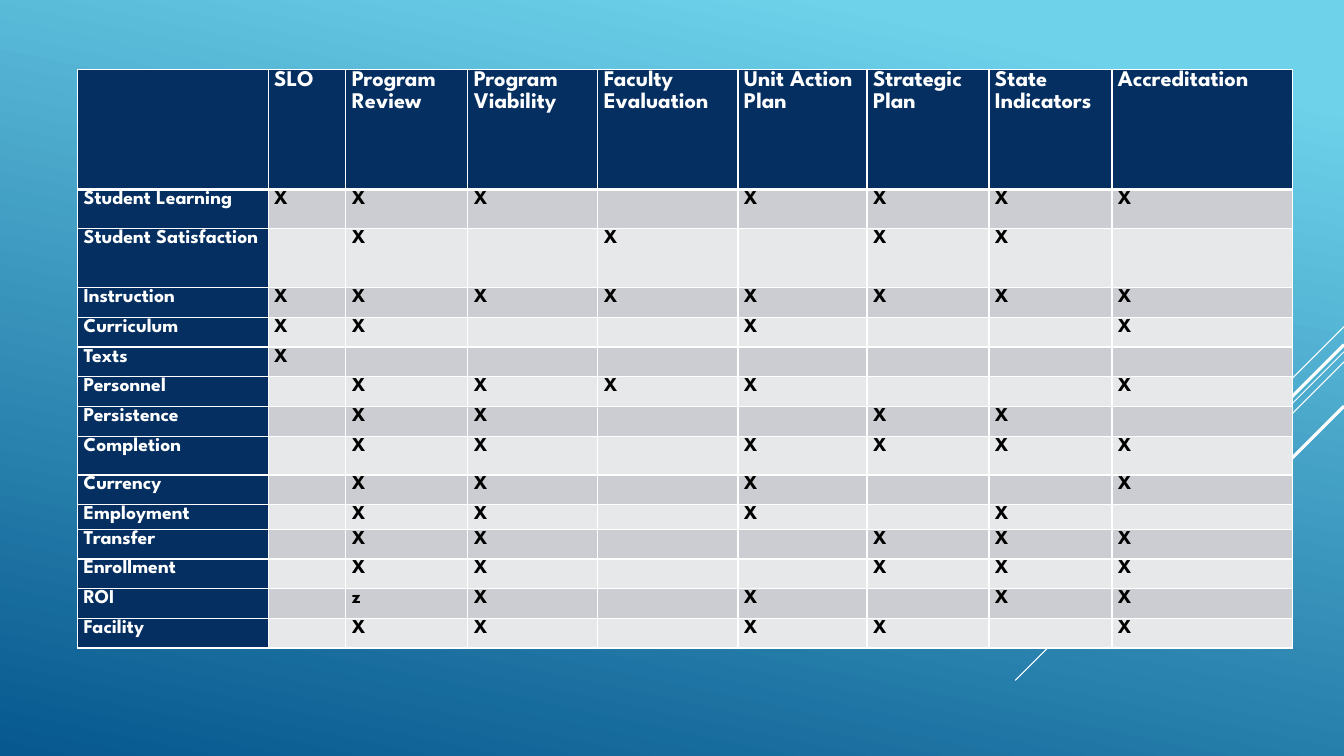
from lxml import etree
from pptx import Presentation
from pptx import util as u
from pptx.dml.color import RGBColor
from pptx.enum import shapes
from pptx.oxml import ns

HEADS = ["", "SLO", "Program Review", "Program Viability", "Faculty Evaluation",
         "Unit Action Plan", "Strategic Plan", "State Indicators", "Accreditation"]
# area, one mark per use ("-" for none), height in table rows
AREAS = [
    ("Student Learning", "XXX-XXXX", 1.31),
    ("Student Satisfaction", "-X-X-XX-", 2),
    ("Instruction", "XXXXXXXX", 1),
    ("Curriculum", "XX--X--X", 1),
    ("Texts", "X-------", 1),
    ("Personnel", "-XXXX--X", 1),
    ("Persistence", "-XX--XX-", 1),
    ("Completion", "-XX-XXXX", 1.31),
    ("Currency", "-XX-X--X", 1),
    ("Employment", "-XX-X-X-", 0.83),
    ("Transfer", "-XX--XXX", 1),
    ("Enrollment", "-XX--XXX", 1),
    ("ROI", "-zX-X-XX", 1),
    ("Facility", "-XX-XX-X", 1),
]
HEAD_ROWS = 4.04
COLS = [1.89, 0.77, 1.21, 1.29, 1.39, 1.28, 1.21, 1.22, 1.79]
LEFT, TOP, HIGH = 0.77, 0.69, 5.74
# diagonal stripes from the right edge: top, run, weight
STRIPES = [(3.24, 1, 0.75), (3.49, 3.26, 0.75), (3.59, 2.07, 0.75),
           (3.42, 1.91, 2.25), (4.03, 1.39, 2.25)]

FONT = "League Spartan"
WHITE = RGBColor(0xFF, 0xFF, 0xFF)
BLACK = RGBColor(0, 0, 0)
NAVY = RGBColor(0x05, 0x2F, 0x61)
BANDS = [RGBColor(0xE7, 0xE8, 0xEA), RGBColor(0xCC, 0xCD, 0xD2)]
SKY = [(0.1, RGBColor(0x6E, 0xD2, 0xEB)), (1, RGBColor(0x06, 0x58, 0x8E))]
INSET = {"margin_left": u.Inches(0.06), "margin_right": u.Inches(0.06),
         "margin_top": 0, "margin_bottom": 0}


def add(node, tag, **attrs):
    return etree.SubElement(node, ns.qn(tag), attrs)


def paint(slide):
    fill = slide.background.fill
    fill.gradient()
    fill.gradient_angle = 360 - 102
    for stop, (pos, color) in zip(fill.gradient_stops, SKY):
        stop.position, stop.color.rgb = pos, color


def stripe(slide, edge, top, run, weight):
    line = slide.shapes.add_connector(
        shapes.MSO_CONNECTOR.STRAIGHT, u.Inches(edge), u.Inches(top),
        u.Inches(edge - run), u.Inches(top + run))
    line.line.color.rgb = WHITE
    line.line.width = u.Pt(weight)
    add(line._element.spPr, "a:effectLst")


def frame(cell, row):
    """Give the cell white borders, heavy between header and body."""
    props = cell._tc.get_or_add_tcPr()
    for side in "LRTB":
        heavy = (row, side) in [(0, "B"), (1, "T")]
        edge = add(props, "a:ln" + side, w=str(u.Pt(3 if heavy else 1)))
        add(add(edge, "a:solidFill"), "a:srgbClr", val=str(WHITE))


def write(cell, words, size, color):
    para = cell.text_frame.paragraphs[0]
    para.line_spacing = 1.07
    if words:
        run = para.add_run()
        run.text = words
        style = {"name": FONT, "size": u.Pt(size), "bold": True}
        for key, value in style.items():
            setattr(run.font, key, value)
        run.font.color.rgb = color
    else:
        end = add(para._p, "a:endParaRPr", sz=str(size * 100))
        add(end, "a:latin", typeface=FONT)


def fill_in(slide):
    rows = [HEADS] + [[name, *marks.replace("-", " ")] for name, marks, _ in AREAS]
    spans = [HEAD_ROWS] + [span for *_, span in AREAS]
    unit = HIGH / sum(spans)
    table = slide.shapes.add_table(
        len(rows), len(COLS), u.Inches(LEFT), u.Inches(TOP),
        u.Inches(sum(COLS)), u.Inches(HIGH)).table
    for col, wide in zip(table.columns, COLS):
        col.width = u.Inches(wide)
    for r, (row, span) in enumerate(zip(rows, spans)):
        table.rows[r].height = u.Inches(span * unit)
        for c, words in enumerate(row):
            cell = table.cell(r, c)
            label = r == 0 or c == 0
            for key, value in INSET.items():
                setattr(cell, key, value)
            frame(cell, r)
            cell.fill.solid()
            cell.fill.fore_color.rgb = NAVY if label else BANDS[r % 2]
            write(cell, words.strip(), 14 if r else 16, WHITE if label else BLACK)


def main():
    deck = Presentation()
    deck.slide_width, deck.slide_height = u.Inches(13.33), u.Inches(7.5)
    slide = deck.slides.add_slide(deck.slide_layouts[6])
    paint(slide)
    for top, run, weight in STRIPES:
        stripe(slide, 13.33, top, run, weight)
    fill_in(slide)
    deck.save("out.pptx")


if __name__ == "__main__":
    main()
